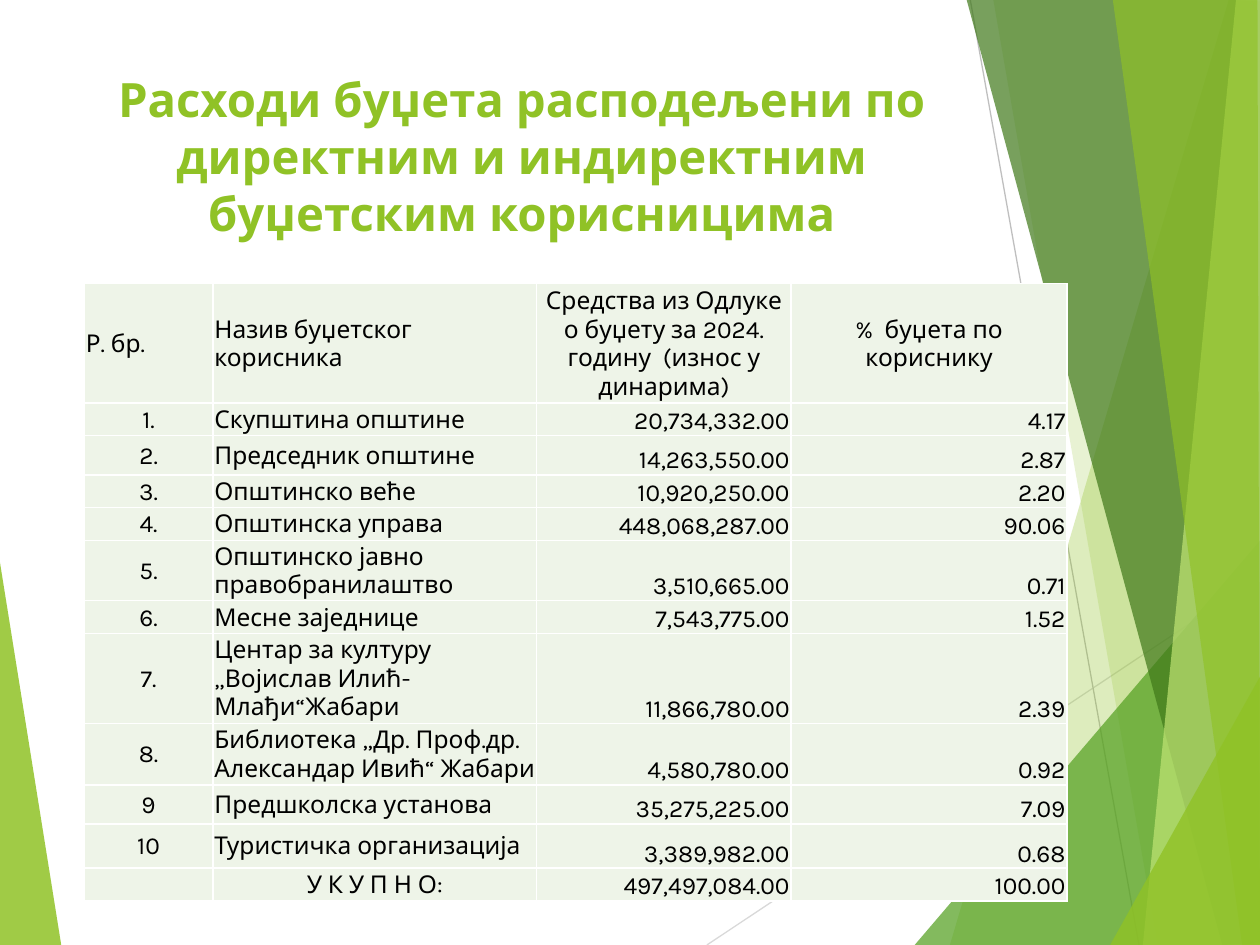
from lxml import etree
from pptx import Presentation
from pptx import util as u
from pptx.dml import color
from pptx.enum import shapes, text
from pptx.oxml import ns

GREEN, PALE, WHITE, BLACK = "90C226", "EEF4E8", "FFFFFF", "000000"
LEFT, CENTER, RIGHT = text.PP_ALIGN.LEFT, text.PP_ALIGN.CENTER, text.PP_ALIGN.RIGHT
MIDDLE, BOTTOM = text.MSO_ANCHOR.MIDDLE, text.MSO_ANCHOR.BOTTOM
INSETS = dict(margin_left=u.Cm(0.03), margin_right=u.Cm(0.03),
              margin_top=u.Cm(0.03), margin_bottom=0)

FACETS = [
    (GREEN, 30, [(24.77, 0), (19.15, 19.05), (25.45, 19.08), (25.43, 0.03)]),
    (GREEN, 20, [(20.02, -0.03), (23.34, 19.05), (25.43, 19.05), (25.43, -0.03)]),
    ("54A021", 72, [(18.44, 19.05), (25.4, 10.9), (25.43, 19.05)]),
    ("3F7819", 70, [(19.48, -0.03), (24.64, 19.05), (25.43, 19.02), (25.43, -0.03)]),
    ("C0E474", 70, [(24.92, -0.03), (23.04, 19.05), (25.43, 19.05), (25.4, -0.03)]),
    (GREEN, 65, [(22.43, -0.03), (25.04, 19.05), (25.4, 19.05), (25.35, -0.03)]),
    (GREEN, 80, [(22.38, 19.05), (25.43, 13.59), (25.43, 19.05)]),
]

COLUMNS = [2.59, 6.53, 5.13, 5.56]
HEADER = ["Р. бр.", "Назив буџетског корисника",
          "Средства из Одлуке о буџету за 2024. годину  (износ у динарима)",
          "%  буџета по кориснику"]
BUDGET = [
    (0.66, "1.", "Скупштина општине", "20,734,332.00", "4.17"),
    (0.79, "2.", "Председник општине", "14,263,550.00", "2.87"),
    (0.66, "3.", "Општинско веће", "10,920,250.00", "2.20"),
    (0.66, "4.", "Општинска управа", "448,068,287.00", "90.06"),
    (0.86, "5.", "Општинско јавно правобранилаштво", "3,510,665.00", "0.71"),
    (0.66, "6.", "Месне заједнице", "7,543,775.00", "1.52"),
    (1.47, "7.", "Центар за културу  „Војислав Илић-Млађи“Жабари", "11,866,780.00", "2.39"),
    (1.24, "8.", "Библиотека „Др. Проф.др. Александар Ивић“ Жабари", "4,580,780.00", "0.92"),
    (0.79, "9", "Предшколска установа", "35,275,225.00", "7.09"),
    (0.89, "10", "Туристичка организација", "3,389,982.00", "0.68"),
]
TOTAL = ["", "У К У П Н О:", "497,497,084.00", "100.00"]


def rgb(value):
    return color.RGBColor.from_string(value)


def apply(target, values):
    for name, value in values.items():
        setattr(target, name, value)


class Deck:
    font = "Karla"

    def __init__(self, width, height):
        self.prs = Presentation()
        self.prs.slide_width, self.prs.slide_height = u.Cm(width), u.Cm(height)
        self.s = self.prs.slides.add_slide(self.prs.slide_layouts[6])

    def facet(self, fill, opacity, points):
        pts = [(u.Cm(x), u.Cm(y)) for x, y in points]
        fb = self.s.shapes.build_freeform(*pts[0])
        fb.add_line_segments(pts[1:], close=True)
        sp = fb.convert_to_shape()
        sp.shadow.inherit = False
        sp.line.fill.background()
        sp.fill.solid()
        sp.fill.fore_color.rgb = rgb(fill)
        clr = sp._element.spPr.find(".//" + ns.qn("a:srgbClr"))
        etree.SubElement(clr, ns.qn("a:alpha"), val=str(opacity * 1000))

    def line(self, stroke, *ends):
        sp = self.s.shapes.add_connector(
            shapes.MSO_CONNECTOR.STRAIGHT, *(u.Cm(v) for v in ends))
        sp.line.color.rgb = rgb(stroke)
        sp.line.width = u.Pt(0.75)
        etree.SubElement(sp._element.spPr, ns.qn("a:effectLst"))

    def words(self, tf, words, size, fill, align, bold=False):
        p = tf.paragraphs[0]
        p.alignment = align
        if not words:
            p._p.get_or_add_endParaRPr().set("sz", str(size * 100))
            return
        r = p.add_run()
        r.text = words
        apply(r.font, dict(name=self.font, size=u.Pt(size), bold=bold))
        r.font.color.rgb = rgb(fill)

    def title(self, words, *box):
        tf = self.s.shapes.add_textbox(*(u.Cm(v) for v in box)).text_frame
        apply(tf, dict(word_wrap=True, vertical_anchor=BOTTOM))
        self.words(tf, words, 27, GREEN, CENTER, True)

    def cell(self, cell, words, align, anchor):
        apply(cell, dict(INSETS, vertical_anchor=anchor))
        tcPr = cell._tc.get_or_add_tcPr()
        for side in ("lnL", "lnR", "lnT", "lnB"):
            ln = etree.SubElement(tcPr, ns.qn("a:" + side), w=str(u.Pt(1)))
            fill = etree.SubElement(ln, ns.qn("a:solidFill"))
            etree.SubElement(fill, ns.qn("a:srgbClr"), val=WHITE)
        cell.fill.solid()
        cell.fill.fore_color.rgb = rgb(PALE)
        self.words(cell.text_frame, words, 14, BLACK, align)

    def table(self, left, top, widths, rows):
        heights = [row[0] for row in rows]
        tb = self.s.shapes.add_table(
            len(rows), len(widths), u.Cm(left), u.Cm(top),
            u.Cm(sum(widths)), u.Cm(sum(heights))).table
        apply(tb, dict(first_row=False, horz_banding=False))
        for col, width in zip(tb.columns, widths):
            col.width = u.Cm(width)
        for i, (height, words, aligns, anchors) in enumerate(rows):
            tb.rows[i].height = u.Cm(height)
            for j, values in enumerate(zip(words, aligns, anchors)):
                self.cell(tb.cell(i, j), *values)


def main():
    deck = Deck(25.4, 19.05)
    deck.facet(GREEN, 85, [(-0.03, 11.15), (1.24, 19.08), (-0.03, 19.05)])
    deck.line("D9D9D9", 14.25, 19.05, 25.43, 11.61)
    deck.line("BFBFBF", 19.56, 0, 22.96, 19.05)
    for facet in FACETS:
        deck.facet(*facet)
    deck.title("Расходи буџета расподељени по директним и индиректним "
               "буџетским корисницима", 1.7, 1.32, 17.63, 3.66)
    anchors = [MIDDLE, MIDDLE, BOTTOM, BOTTOM]
    rows = [(1.96, HEADER, [LEFT, LEFT, CENTER, CENTER], [MIDDLE] * 4)]
    rows += [(height, words, [CENTER, LEFT, RIGHT, RIGHT], anchors)
             for height, *words in BUDGET]
    rows.append((0.66, TOTAL, [CENTER, CENTER, RIGHT, RIGHT], anchors))
    deck.table(1.7, 5.72, COLUMNS, rows)
    deck.prs.save("out.pptx")


if __name__ == "__main__":
    main()
